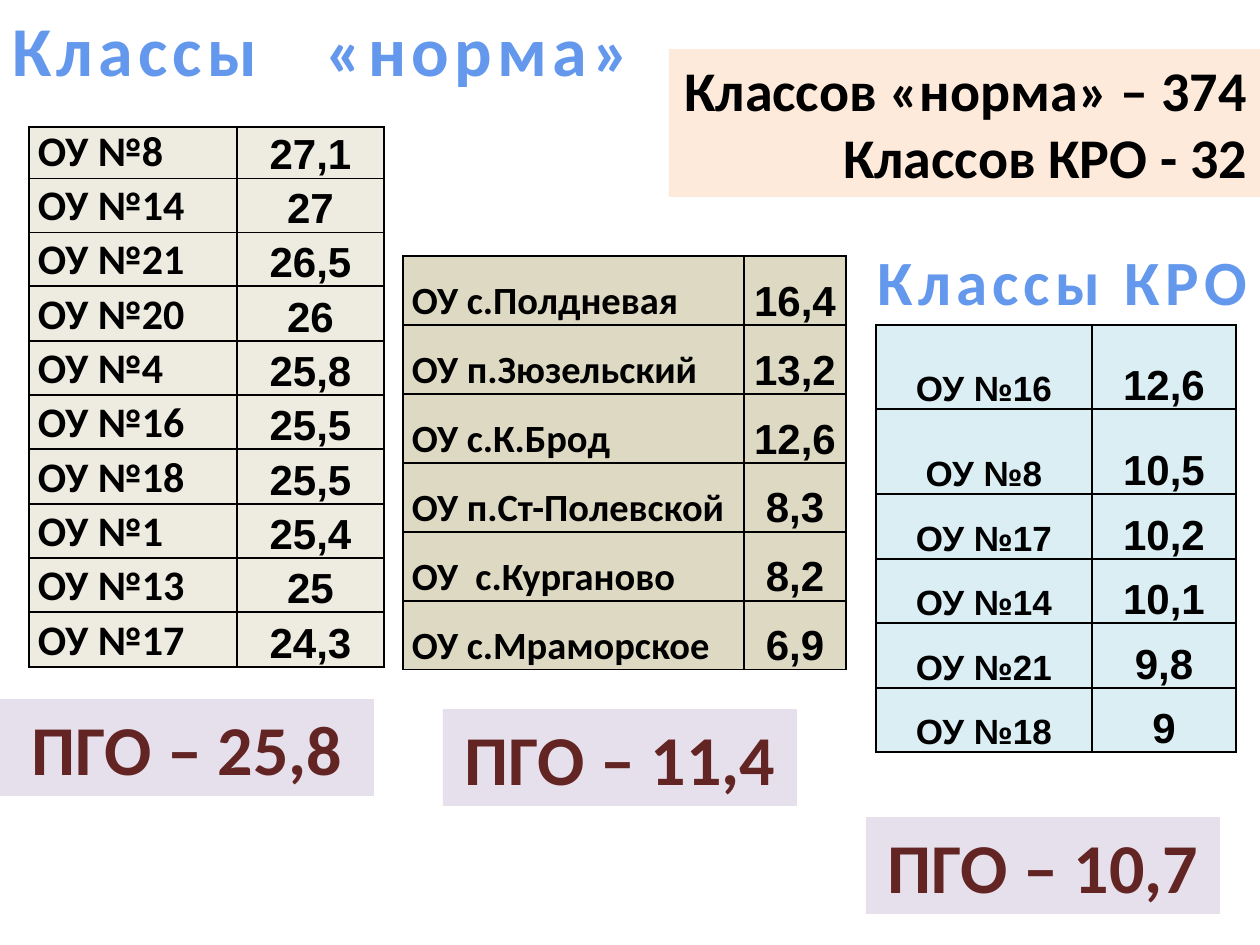
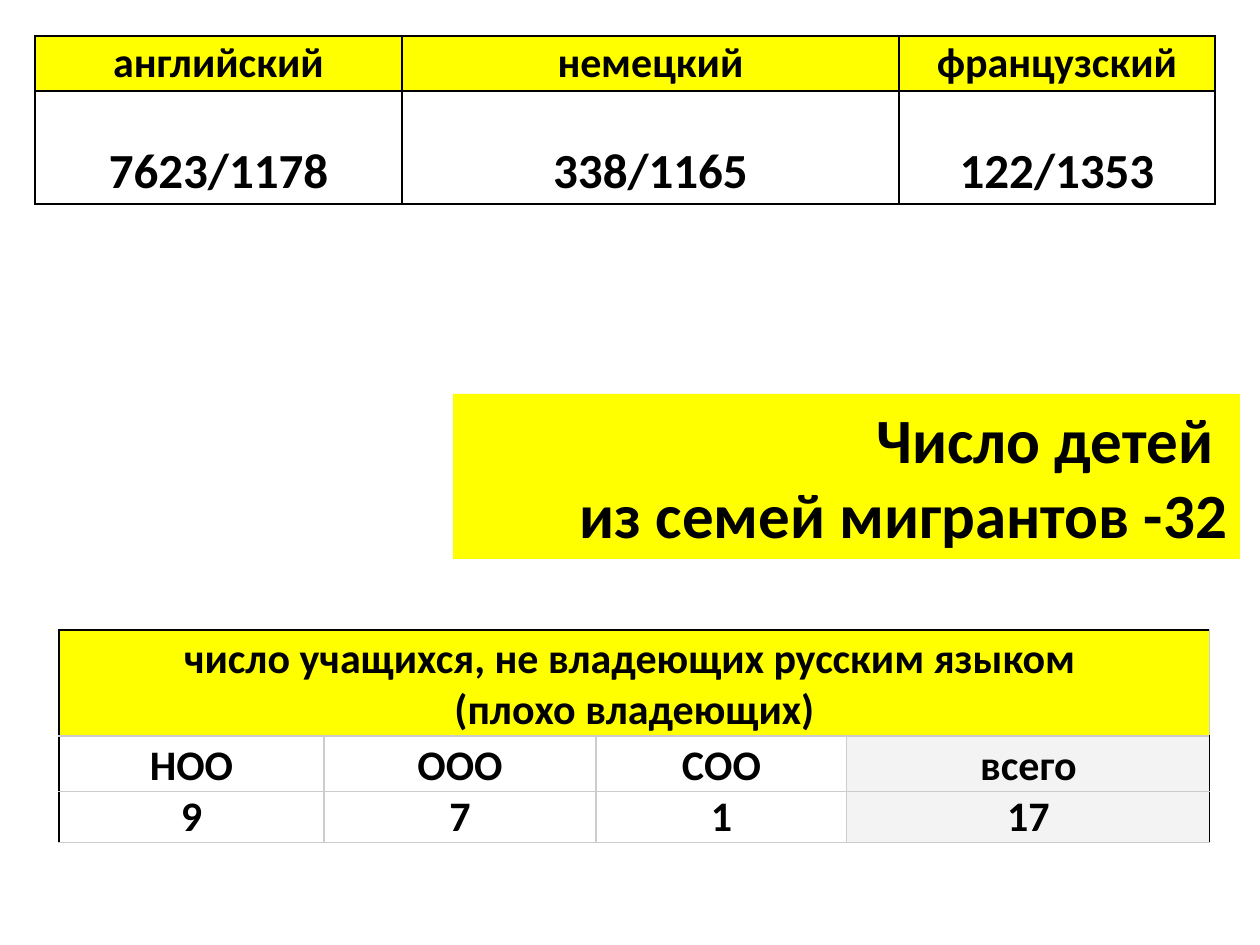
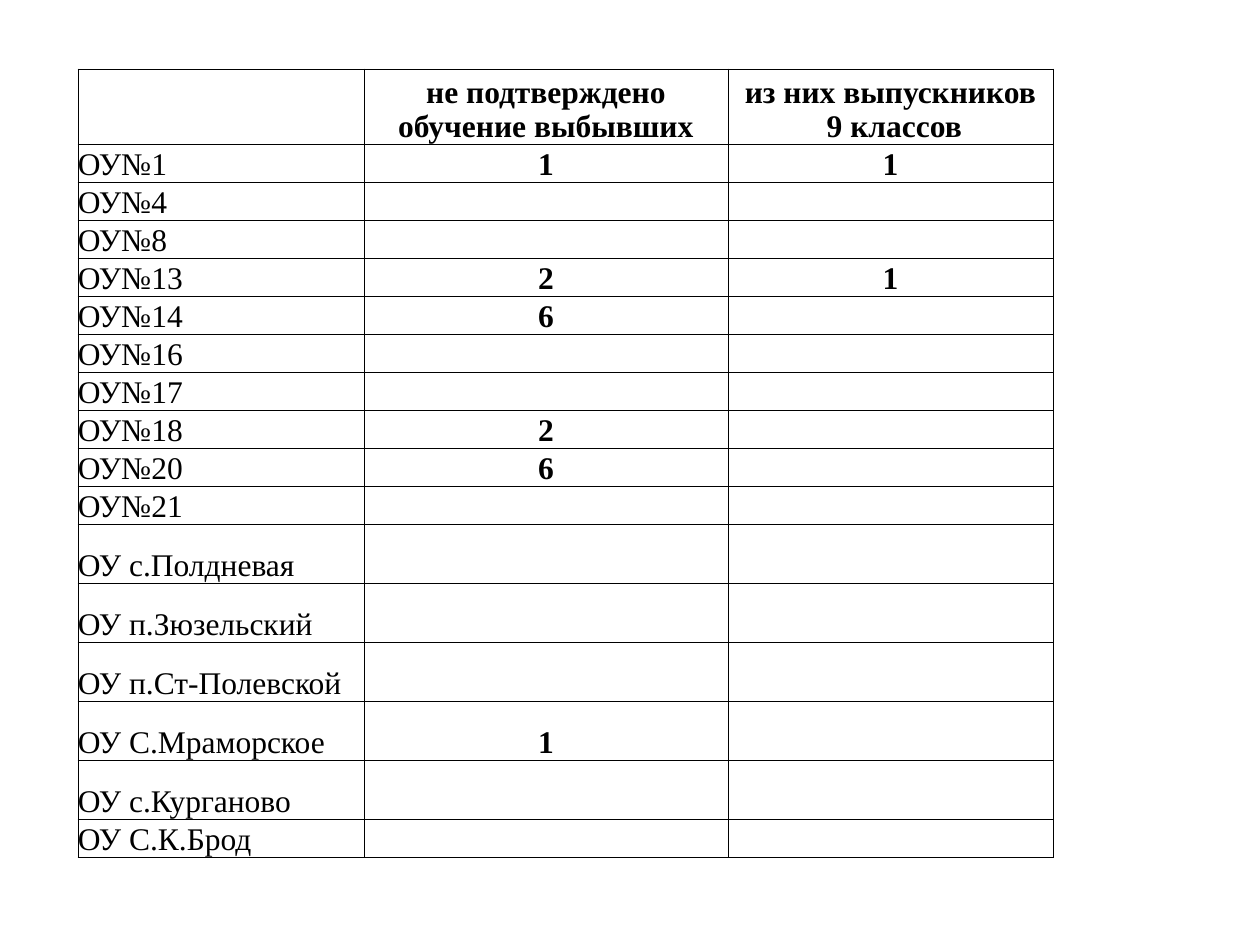
"""Builds three slides on class sizes, languages studied and unconfirmed leavers."""
from lxml.etree import SubElement
from pptx import Presentation
from pptx.dml.color import RGBColor
from pptx.enum.shapes import MSO_SHAPE
from pptx.enum.text import MSO_ANCHOR, PP_ALIGN
from pptx.oxml import parse_xml
from pptx.oxml.ns import qn
from pptx.util import Emu, Pt

COLORS = {
    "black": "000000", "grid": "CCCCCC", "white": "FFFFFF", "total": "F3F3F3",
    "yellow": "FFFF00", "cream": "EEECE1", "sand": "DDD9C3", "ice": "DBEEF4",
    "lilac": "E6E0EC", "peach": "FDEADA", "maroon": "632523",
    "title_top": "6398ED", "title_end": "265EA0", "title_line": "F4F6F9",
}
ALIGN = {"l": PP_ALIGN.LEFT, "c": PP_ALIGN.CENTER, "r": PP_ALIGN.RIGHT}
NS = 'xmlns:a="http://schemas.openxmlformats.org/drawingml/2006/main"'


def column(width, align, size, font, bold=True, fill=None):
    """Describe one table column and the style of its cells."""
    return dict(width=width, fill=fill,
                style=dict(align=align, size=size, font=font, bold=bold))


CITY = dict(
    at=(29, 127), heights=[51] + [54, 54, 55] * 3, pad=(9, 0), line=1,
    columns=[column(208, "l", 24, "Calibri", fill="cream"),
             column(147, "c", 24, "Arial", fill="cream")],
    rows=[("ОУ №8", "27,1"), ("ОУ №14", "27"), ("ОУ №21", "26,5"),
          ("ОУ №20", "26"), ("ОУ №4", "25,8"), ("ОУ №16", "25,5"),
          ("ОУ №18", "25,5"), ("ОУ №1", "25,4"), ("ОУ №13", "25"),
          ("ОУ №17", "24,3")])
VILLAGE = dict(
    at=(403, 256), heights=[69] * 6, pad=(9, 0), line=1,
    columns=[column(341, "l", 22, "Calibri", fill="sand"),
             column(102, "c", 24, "Arial", fill="sand")],
    rows=[("ОУ с.Полдневая", "16,4"), ("ОУ п.Зюзельский", "13,2"),
          ("ОУ с.К.Брод", "12,6"), ("ОУ п.Ст-Полевской", "8,3"),
          ("ОУ  с.Курганово", "8,2"), ("ОУ с.Мраморское", "6,9")])
KRO = dict(
    at=(876, 325), heights=[84, 85] + [65, 64] * 2, pad=(9, 0), line=1,
    columns=[column(216, "c", 20, "Arial", fill="ice"),
             column(144, "c", 24, "Arial", fill="ice")],
    rows=[("ОУ №16", "12,6"), ("ОУ №8", "10,5"), ("ОУ №17", "10,2"),
          ("ОУ №14", "10,1"), ("ОУ №21", "9,8"), ("ОУ №18", "9")])
LANGUAGES = dict(
    at=(35, 36), heights=[55, 113], pad=(4, 2), line=1,
    columns=[column(w, "c", 28, "Calibri") for w in (367, 497, 316)],
    head=dict(size=24), head_fill="yellow",
    rows=[("английский", "немецкий", "французский"),
          ("7623/1178", "338/1165", "122/1353")])
NON_SPEAKERS = dict(
    at=(59, 630), heights=[106, 56, 50], pad=(4, 0), line=0.75, inner="grid",
    columns=[column(w, "c", 24, "Calibri", fill="white") for w in (265, 272, 251)]
    + [column(363, "c", 24, "Calibri", fill="total")],
    head_fill="yellow",
    rows=[("число учащихся, не владеющих русским языком \n(плохо владеющих)",),
          ("НОО", "ООО", "СОО", "всего"), ("9", "7", "1", "17")])
LEAVERS = dict(
    at=(78, 69), heights=[75] + [38] * 10 + [59] * 5 + [38], pad=(0, 0), line=0.5,
    columns=[column(286, "l", 18, "Times New Roman", False),
             column(364, "c", 18, "Times New Roman"),
             column(325, "c", 18, "Times New Roman")],
    rows=[("", "не подтверждено обучение выбывших", "из них выпускников\n 9 классов"),
          ("ОУ№1", "1", "1"), ("ОУ№4", "", ""), ("ОУ№8", "", ""),
          ("ОУ№13", "2", "1"), ("ОУ№14", "6", ""), ("ОУ№16", "", ""),
          ("ОУ№17", "", ""), ("ОУ№18", "2", ""), ("ОУ№20", "6", ""),
          ("ОУ№21", "", ""), ("ОУ с.Полдневая", "", ""),
          ("ОУ п.Зюзельский", "", ""), ("ОУ п.Ст-Полевской", "", ""),
          ("ОУ С.Мраморское", "1", ""), ("ОУ с.Курганово", "", ""),
          ("ОУ С.К.Брод", "", "")])

AVERAGE = dict(size=40, color="maroon", align="c")
SLIDES = [
    dict(tables=[KRO, VILLAGE, CITY],
         titles=[((837, 236, 423, 89), 36, "r", [("Классы КРО", 3)]),
                 ((0, 0, 1014, 97), 40, "l",
                  [("Классы", 3), (" ", 27), ("«норма»", 3)])],
         boxes=[((0, 699, 374, 97), "lilac", "ПГО – 25,8", AVERAGE),
                ((443, 709, 354, 97), "lilac", "ПГО – 11,4", AVERAGE),
                ((866, 817, 354, 97), "lilac", "ПГО – 10,7", AVERAGE),
                ((669, 49, 591, 148), "peach",
                 "Классов «норма» – 374 \nКлассов КРО - 32",
                 dict(size=32, align="r"))]),
    dict(tables=[LANGUAGES, NON_SPEAKERS],
         boxes=[((453, 394, 787, 165), "yellow",
                 "Число детей \nиз семей мигрантов -32",
                 dict(size=36, align="r"))]),
    dict(tables=[LEAVERS]),
]


def px(n):
    """Turn pixels into EMU."""
    return Emu(round(n * 914400 / 126))


def rgb(name):
    """Look up a named colour."""
    return RGBColor.from_string(COLORS[name])


def write(tf, text, size, align="l", font="Calibri", bold=True, color="black"):
    """Write one paragraph per line of text."""
    tf.word_wrap = True
    for i, line in enumerate(text.split("\n")):
        p = tf.paragraphs[0] if i == 0 else tf.add_paragraph()
        p.alignment = ALIGN[align]
        if line:
            r = p.add_run()
            r.text = line
            r.font.size, r.font.name, r.font.bold = Pt(size), font, bold
            r.font.color.rgb = rgb(color)


def add_title(slide, at, size, align, runs):
    """Add a spaced heading with gradient letters, thin outline and shadow."""
    tf = slide.shapes.add_textbox(*map(px, at)).text_frame
    tf.word_wrap = True
    p = tf.paragraphs[0]
    p.alignment = ALIGN[align]
    for text, spacing in runs:
        r = p.add_run()
        r.text = text
        r.font.size, r.font.name, r.font.bold = Pt(size), "Calibri", True
        fill = r.font.fill
        fill.gradient()
        fill.gradient_angle = 270
        for stop, name, pos in zip(fill.gradient_stops, ("title_top", "title_end"), (0.1, 0.75)):
            stop.color.rgb, stop.position = rgb(name), pos
        rpr = r.font._element
        rpr.set("spc", str(spacing * 100))
        rpr.insert(0, parse_xml(
            f'<a:ln {NS} w="11430"><a:solidFill><a:srgbClr val="{COLORS["title_line"]}"/>'
            '</a:solidFill></a:ln>'))
        rpr.find(qn("a:gradFill")).addnext(parse_xml(
            f'<a:effectLst {NS}><a:outerShdw blurRad="41275" dist="20320" dir="1800000">'
            f'<a:srgbClr val="{COLORS["black"]}"><a:alpha val="40000"/></a:srgbClr>'
            '</a:outerShdw></a:effectLst>'))


def add_box(slide, at, fill, text, style):
    """Add a filled rectangle with text."""
    sp = slide.shapes.add_shape(MSO_SHAPE.RECTANGLE, *map(px, at))
    sp.shadow.inherit = False
    sp.fill.solid()
    sp.fill.fore_color.rgb = rgb(fill)
    sp.line.fill.background()
    sp.text_frame.vertical_anchor = MSO_ANCHOR.TOP
    write(sp.text_frame, text, **style)


def set_borders(cell, width, sides):
    """Draw the four cell borders in the given colours."""
    tcpr = cell._tc.get_or_add_tcPr()
    for side, name in sides.items():
        ln = SubElement(tcpr, qn(f"a:ln{side}"), w=str(Pt(width)))
        SubElement(SubElement(ln, qn("a:solidFill")), qn("a:srgbClr"), val=COLORS[name])


def add_table(slide, spec):
    """Add a table; a row with one text spans the full width."""
    cols, rows, heights = spec["columns"], spec["rows"], spec["heights"]
    widths = [c["width"] for c in cols]
    size = (*spec["at"], sum(widths), sum(heights))
    table = slide.shapes.add_table(len(rows), len(cols), *map(px, size)).table
    table.first_row = table.horz_banding = False
    for col, width in zip(table.columns, widths):
        col.width = px(width)
    inner, last = spec.get("inner", "black"), len(cols) - 1
    for i, texts in enumerate(rows):
        table.rows[i].height = px(heights[i])
        if len(texts) == 1:
            table.cell(i, 0).merge(table.cell(i, last))
        for j, col in enumerate(cols):
            cell = table.cell(i, j)
            set_borders(cell, spec["line"], {
                "L": inner if j else "black", "R": inner if j < last else "black",
                "T": inner if i else "black", "B": inner})
            style, fill = col["style"], col["fill"]
            if i == 0:
                style = {**style, **spec.get("head", {})}
                fill = spec.get("head_fill", fill)
            if fill:
                cell.fill.solid()
                cell.fill.fore_color.rgb = rgb(fill)
            else:
                cell.fill.background()
            cell.margin_left = cell.margin_right = px(spec["pad"][0])
            cell.margin_top = cell.margin_bottom = px(spec["pad"][1])
            cell.vertical_anchor = MSO_ANCHOR.BOTTOM
            if j < len(texts):
                write(cell.text_frame, texts[j], **style)


def main():
    """Build and save the slides."""
    prs = Presentation()
    prs.slide_width, prs.slide_height = px(1260), px(945)
    for content in SLIDES:
        slide = prs.slides.add_slide(prs.slide_layouts[6])
        for spec in content["tables"]:
            add_table(slide, spec)
        for title in content.get("titles", []):
            add_title(slide, *title)
        for box in content.get("boxes", []):
            add_box(slide, *box)
    prs.save("out.pptx")


if __name__ == "__main__":
    main()
